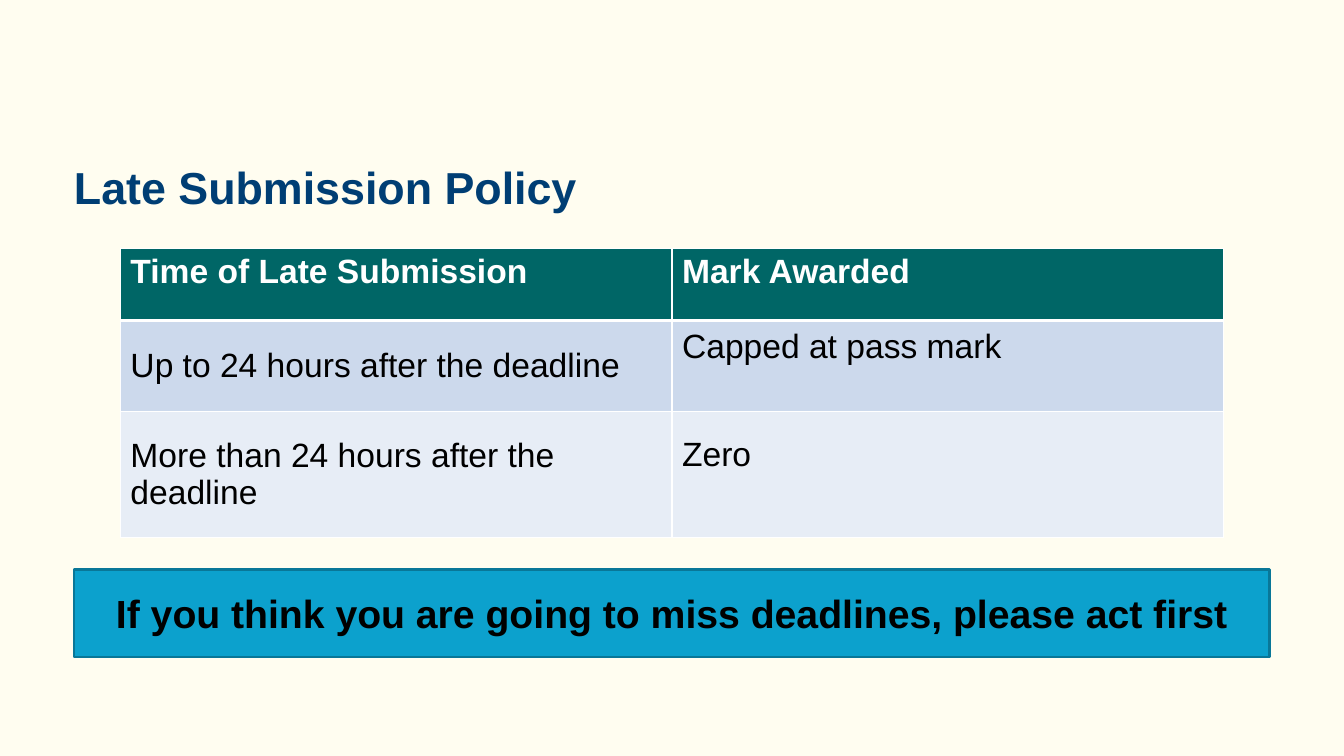
from lxml.etree import SubElement
from pptx import Presentation
from pptx.dml.color import RGBColor
from pptx.enum.shapes import MSO_SHAPE
from pptx.enum.text import MSO_ANCHOR, MSO_AUTO_SIZE, PP_ALIGN
from pptx.oxml.ns import qn
from pptx.util import Pt

COLORS = {
    "background": "FFFDF0",
    "heading": "003E74",
    "header": "006666",
    "capped": "CCD9EC",
    "zero": "E7EDF6",
    "advice": "0CA1CD",
    "advice_edge": "097798",
    "white": "FFFFFF",
    "black": "000000",
}


def add_text(frame, text, size, color, bold):
    run = frame.paragraphs[0].add_run()
    run.text = text
    run.font.name = "Arial"
    run.font.size = Pt(size)
    run.font.bold = bold
    run.font.color.rgb = RGBColor.from_string(COLORS[color])


def add_border(cell, side, width):
    line = SubElement(cell._tc.get_or_add_tcPr(), qn(f"a:ln{side}"), w=str(Pt(width)))
    fill = SubElement(line, qn("a:solidFill"))
    SubElement(fill, qn("a:srgbClr"), val=COLORS["white"])


deck = Presentation()
deck.slide_width = Pt(960)
deck.slide_height = Pt(540)
slide = deck.slides.add_slide(deck.slide_layouts[5])
slide.background.fill.solid()
slide.background.fill.fore_color.rgb = RGBColor.from_string(COLORS["background"])

heading = slide.shapes.title
heading.left, heading.top = Pt(52.8), Pt(80)
heading.width, heading.height = Pt(444), Pt(103.5)
heading_frame = heading.text_frame
heading_frame.auto_size = MSO_AUTO_SIZE.NONE
heading_frame.vertical_anchor = MSO_ANCHOR.MIDDLE
heading_frame.margin_left = heading_frame.margin_right = 0
heading_frame.margin_top, heading_frame.margin_bottom = Pt(3.6), 0
heading_frame.paragraphs[0].alignment = PP_ALIGN.LEFT
add_text(heading_frame, "Late Submission Policy", 32, "heading", True)

policy_rows = [
    (51.6, "header", ["Time of Late Submission", "Mark Awarded"]),
    (64.8, "capped", ["Up to 24 hours after the deadline", "Capped at pass mark"]),
    (90, "zero", ["More than 24 hours after the deadline", "Zero"]),
]
policy = slide.shapes.add_table(3, 2, Pt(86), Pt(177.3), Pt(788), Pt(206.4)).table
for column in policy.columns:
    column.width = Pt(394)

for row_index, (height, fill_name, texts) in enumerate(policy_rows):
    is_header = row_index == 0
    policy.rows[row_index].height = Pt(height)
    for column_index, text in enumerate(texts):
        cell = policy.cell(row_index, column_index)
        cell.margin_left = cell.margin_right = Pt(7.2)
        cell.margin_top = Pt(3.6)
        lifted = not is_header and column_index == 1
        cell.margin_bottom = Pt(31) if lifted else Pt(3.6)
        cell.vertical_anchor = MSO_ANCHOR.TOP if is_header else MSO_ANCHOR.MIDDLE
        top_width = 3 if row_index == 1 else 1
        bottom_width = 3 if is_header else 1
        for side, width in zip("LRTB", (1, 1, top_width, bottom_width)):
            add_border(cell, side, width)
        cell.fill.solid()
        cell.fill.fore_color.rgb = RGBColor.from_string(COLORS[fill_name])
        add_text(cell.text_frame, text, 24, "white" if is_header else "black", is_header)

advice = slide.shapes.add_shape(
    MSO_SHAPE.RECTANGLE, Pt(52.8), Pt(406.8), Pt(854), Pt(62.6)
)
advice.shadow.inherit = False
advice.fill.solid()
advice.fill.fore_color.rgb = RGBColor.from_string(COLORS["advice"])
advice.line.color.rgb = RGBColor.from_string(COLORS["advice_edge"])
advice.line.width = Pt(2)
advice.text_frame.word_wrap = True
advice.text_frame.vertical_anchor = MSO_ANCHOR.MIDDLE
advice.text_frame.paragraphs[0].alignment = PP_ALIGN.CENTER
add_text(
    advice.text_frame,
    "If you think you are going to miss deadlines, please act first",
    28,
    "black",
    True,
)

deck.save("out.pptx")
